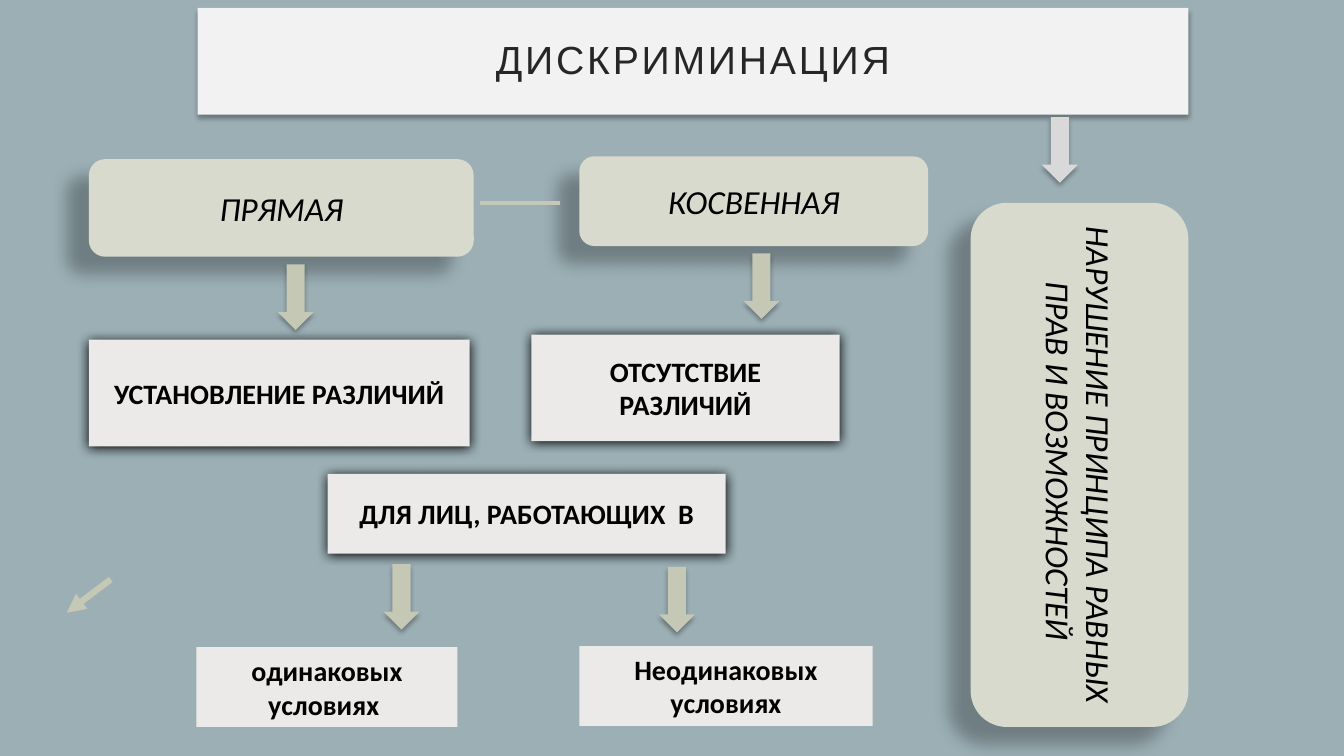
"""Build a slide with a scheme of the forms of discrimination."""
import lxml.etree
import pptx
import pptx.dml.color
import pptx.enum.shapes
import pptx.enum.text
import pptx.oxml.ns
import pptx.util

Cm = pptx.util.Cm
Pt = pptx.util.Pt
SHAPE = pptx.enum.shapes.MSO_SHAPE
TEXT = pptx.enum.text

SAGE = "D7DACD"
ARROW_SAGE = "C4C8B5"
LIGHT_GREY = "ECEAE8"
ARROW_WIDTH, ARROW_HEIGHT = 0.91, 1.65

SOFT_SHADOW = (32, 3.5, 2.2, 90)
DARK_SHADOW = (100, 8.5, 1, 90)
LONG_SHADOW = (28, 11.8, 19.7, 141)

KINDS = [
    ("КОСВЕННАЯ", (14.6, 3.94, 8.79, 2.26)),
    ("ПРЯМАЯ", (2.24, 4.01, 9.7, 2.46)),
    ("НАРУШЕНИЕ ПРИНЦИПА РАВНЫХ ПРАВ И ВОЗМОЖНОСТЕЙ ", (24.46, 5.11, 5.49, 13.21)),
]
FEATURES = [
    ("УСТАНОВЛЕНИЕ РАЗЛИЧИЙ", (2.24, 8.56, 9.6, 2.69), DARK_SHADOW),
    ("ОТСУТСТВИЕ РАЗЛИЧИЙ", (13.39, 8.43, 7.77, 2.69), DARK_SHADOW),
    ("ДЛЯ ЛИЦ, РАБОТАЮЩИХ  В", (8.26, 11.94, 10.03, 2.01), DARK_SHADOW),
    ("одинаковых условиях ", (4.95, 16.31, 6.58, 2.01), None),
    ("Неодинаковых условиях", (14.6, 16.28, 7.39, 2.01), None),
]
ARROW_CENTRES = [
    (17.06, 15.11, ARROW_SAGE),
    (10.12, 15.04, ARROW_SAGE),
    (19.19, 7.21, ARROW_SAGE),
    (7.45, 7.49, ARROW_SAGE),
    (26.71, 3.78, "D9D9D9"),
]


def set_colour(fill, colour):
    """Make a fill solid with a hex colour."""
    fill.solid()
    fill.fore_color.rgb = pptx.dml.color.RGBColor.from_string(colour)


def add_child(parent, tag, **attributes):
    """Append a DrawingML element and return it."""
    name = pptx.oxml.ns.qn(tag)
    values = {key: str(value) for key, value in attributes.items()}
    return lxml.etree.SubElement(parent, name, values)


def style_shape(shape, colour, shadow):
    """Give a shape its fill and shadow, without an outline."""
    set_colour(shape.fill, colour)
    shape.line.fill.background()
    shape.shadow.inherit = False
    if shadow:
        opacity, blur, distance, angle = shadow
        effects = shape._element.spPr.find(pptx.oxml.ns.qn("a:effectLst"))
        outer = add_child(effects, "a:outerShdw", blurRad=int(Pt(blur)),
                          dist=int(Pt(distance)), dir=angle * 60000,
                          algn="ctr", rotWithShape=0)
        black = add_child(outer, "a:srgbClr", val="000000")
        add_child(black, "a:alpha", val=opacity * 1000)


def write_text(shape, text, size, colour="000000", font="Calibri", bold=False, italic=False):
    """Write one centred paragraph and return it."""
    frame = shape.text_frame
    frame.text = text
    frame.word_wrap = True
    frame.auto_size = TEXT.MSO_AUTO_SIZE.NONE
    frame.vertical_anchor = TEXT.MSO_ANCHOR.MIDDLE
    paragraph = frame.paragraphs[0]
    paragraph.alignment = TEXT.PP_ALIGN.CENTER
    for run in paragraph.runs:
        run.font.size = Pt(size)
        run.font.name = font
        run.font.bold = bold
        run.font.italic = italic
        set_colour(run.font.fill, colour)
    return paragraph


def add_box(slide, preset, box, colour, shadow):
    """Add a filled preset shape at a box in centimetres."""
    shape = slide.shapes.add_shape(preset, *map(Cm, box))
    style_shape(shape, colour, shadow)
    return shape


def add_title(slide, text):
    """Format the title placeholder as a wide banner."""
    title = slide.shapes.title
    title.left, title.top, title.width, title.height = map(Cm, (4.98, 0.2, 24.97, 2.69))
    style_shape(title, "F2F2F2", SOFT_SHADOW)
    paragraph = write_text(title, text, 28, "262626", "Arial")
    paragraph.line_spacing = 0.9
    paragraph.runs[0].font._element.set("spc", "200")
    frame = title.text_frame
    frame.margin_left = frame.margin_right = Cm(0.76)
    frame.margin_top = frame.margin_bottom = Cm(0.51)


def add_down_arrow(slide, centre_x, centre_y, colour):
    """Add a block arrow around its centre."""
    box = (centre_x - ARROW_WIDTH / 2, centre_y - ARROW_HEIGHT / 2, ARROW_WIDTH, ARROW_HEIGHT)
    add_box(slide, SHAPE.DOWN_ARROW, box, colour, SOFT_SHADOW)


def add_line(slide, ends, width, arrowhead=False):
    """Add a straight line, with an arrowhead at its end if wanted."""
    straight = pptx.enum.shapes.MSO_CONNECTOR.STRAIGHT
    connector = slide.shapes.add_connector(straight, *map(Cm, ends))
    set_colour(connector.line.fill, ARROW_SAGE)
    connector.line.width = Pt(width)
    if arrowhead:
        add_child(connector.line._get_or_add_ln(), "a:tailEnd", type="triangle")
    add_child(connector._element.spPr, "a:effectLst")


def main():
    """Build and save the slide."""
    presentation = pptx.Presentation()
    presentation.slide_width = Cm(33.87)
    presentation.slide_height = Cm(19.05)
    slide = presentation.slides.add_slide(presentation.slide_layouts[5])
    set_colour(slide.background.fill, "9BAFB5")

    add_title(slide, "ДИСКРИМИНАЦИЯ")
    for text, box, shadow in FEATURES:
        feature = add_box(slide, SHAPE.RECTANGLE, box, LIGHT_GREY, shadow)
        write_text(feature, text, 20, bold=True)
    for text, box in KINDS:
        kind = add_box(slide, SHAPE.ROUNDED_RECTANGLE, box, SAGE, LONG_SHADOW)
        write_text(kind, text, 24, italic=True)
        if kind.height > kind.width:
            kind.text_frame._txBody.bodyPr.set("vert", "vert")
    for centre_x, centre_y, colour in ARROW_CENTRES:
        add_down_arrow(slide, centre_x, centre_y, colour)
    add_line(slide, (12.09, 5.11, 14.1, 5.11), 3)
    add_line(slide, (2.79, 14.6, 1.68, 15.44), 4.5, arrowhead=True)

    presentation.save("out.pptx")


if __name__ == "__main__":
    main()
